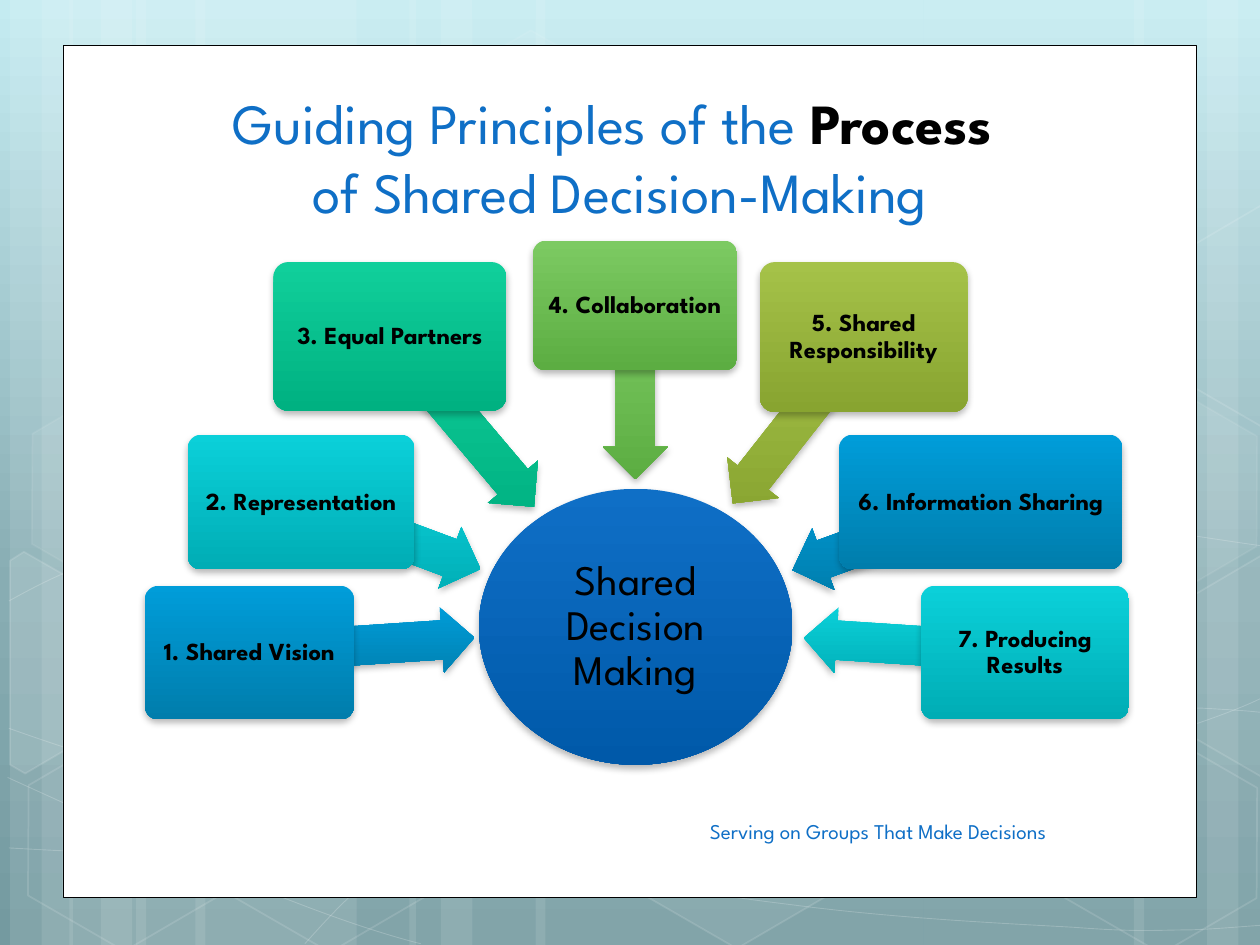
import copy
import math

import pptx
import pptx.dml.color
import pptx.enum.shapes
import pptx.enum.text
import pptx.oxml
import pptx.oxml.ns
import pptx.util
from pptx.util import Inches

FONT = "League Spartan"
SHAPES = pptx.enum.shapes.MSO_SHAPE
COLORS = {"white": "FFFFFF", "black": "000000", "title": "0F6FC6"}
GRADIENTS = {
    "backdrop": ["C4EBF1", "88ADB3", "749AA0"],
    "hub": ["0F6FC6", "0059A9"],
    "blue": ["009DD9", "007DAC"],
    "teal": ["0BD0D9", "00ADB5"],
    "mint": ["10CF9B", "00B181"],
    "green": ["7CCA62", "5CAD42"],
    "olive": ["A5C249", "88A430"],
}
BANDS = [(1.08, 1.75), (0.08, 0.5), (0.33, 0.83), (1.55, 1.75), (0.55, 0.5), (0.8, 0.83),
         (7.33, 1.75), (9.58, 0.5), (9, 0.83), (4.25, 3.08), (3.25, 0.5), (3.5, 0.83)]
WAVES = [
    [(0.07, 6.73), (0.61, 6.76), (1.15, 6.79), (1.9, 6.78), (2.65, 6.77), (3.58, 6.75), (4.58, 6.65),
     (5.58, 6.55), (7, 6.36), (7.92, 6.17), (8.83, 5.98), (9.77, 5.68), (10.07, 5.51)],
    [(0.07, 4.77), (0.36, 4.61), (0.65, 4.46), (1.21, 4.31), (1.78, 4.16), (2.59, 3.94), (3.47, 3.87),
     (4.36, 3.8), (5.44, 3.79), (6.54, 3.87), (7.64, 3.95), (9.47, 4.26), (10.07, 4.34)],
    [(0.06, 6.17), (1.27, 6.72), (2.47, 7.27), (3.34, 7.49)],
    [(0.07, 5.78), (0.38, 5.89), (0.7, 6), (1.28, 6.16), (1.86, 6.31), (2.73, 6.56), (3.57, 6.73),
     (4.4, 6.9), (5.45, 7.08), (6.28, 7.18), (7.11, 7.29), (8, 7.33), (8.53, 7.36),
     (9.05, 7.4), (9.19, 7.38), (9.45, 7.38), (9.71, 7.37), (9.89, 7.35), (10.07, 7.34)],
    [(2.42, 7.49), (2.6, 7.29), (2.78, 7.09), (3.02, 6.91), (3.26, 6.73), (3.6, 6.53), (3.88, 6.39),
     (4.16, 6.25), (4.33, 6.19), (4.7, 6.09), (5.06, 5.99), (5.73, 5.85), (6.08, 5.78),
     (6.44, 5.71), (6.49, 5.71), (6.8, 5.69), (7.11, 5.66), (7.6, 5.63), (7.94, 5.62),
     (8.29, 5.61), (8.86, 5.62), (8.86, 5.62), (9.53, 5.62),
     (9.71, 5.63), (9.88, 5.64), (9.97, 5.65), (10.06, 5.66), (10.03, 5.65), (10.06, 5.66)],
]
STRAIGHT_END = (9.53, 5.62)
HEXAGONS = [(3.34, 0.36, 4, 8), (4.97, 5.89, 6, 12), (0.11, 5.91, 0, 12), (0.14, 3.12, 7, 8),
            (1.74, 5.92, 0, 12), (7.53, 4.53, 10, 12), (8.34, 5.93, 0, 12), (8.34, 3.14, 7, 8)]
CUT_HEXAGONS = [
    ([(0.08, 4.45), (0.19, 4.38), (0.96, 4.82), (0.95, 5.7), (0.2, 6.14), (0.08, 6.07)], 10),
    ([(9.26, 4.85), (10.01, 4.41), (10.09, 4.46), (10.09, 6.13), (10.02, 6.17), (9.26, 5.73)], 4),
    ([(9.26, 2.07), (10.01, 1.63), (10.1, 1.68), (10.09, 3.35), (10.02, 3.39), (9.26, 2.95)], 0),
]
HUB = (3.8, 3.88, 2.49, 2.19)
PRINCIPLES = [
    ("1. Shared Vision", "blue", (1.15, 4.65, 1.66, 1.06), 1.79),
    ("2. Representation", "teal", (1.49, 3.45, 1.8, 1.07), 1.52),
    ("3. Equal Partners", "mint", (2.17, 2.08, 1.85, 1.18), 1.77),
    ("4. Collaboration", "green", (4.23, 1.91, 1.62, 1.03), 1.38),
    ("5. Shared Responsibility", "olive", (6.03, 2.08, 1.65, 1.19), 1.68),
    ("6. Information Sharing", "blue", (6.66, 3.45, 2.25, 1.07), 1.59),
    ("7. Producing Results", "teal", (7.31, 4.65, 1.65, 1.06), 1.76),
]


def rgb(name):
    return pptx.dml.color.RGBColor.from_string(COLORS[name])


def paint(fill, name, opacity=100):
    if not opacity:
        fill.background()
        return
    fill.solid()
    fill.fore_color.rgb = rgb(name)
    if opacity < 100:
        color = fill._xPr.find(".//" + pptx.oxml.ns.qn("a:srgbClr"))
        color.append(color.makeelement(pptx.oxml.ns.qn("a:alpha"), {"val": str(opacity * 1000)}))


def blend(fill, name, positions=(0, 1)):
    fill.gradient()
    fill.gradient_angle = 270
    gradient = fill._xPr.find(pptx.oxml.ns.qn("a:gradFill"))
    gradient.set("rotWithShape", "0")
    stops = gradient.find(pptx.oxml.ns.qn("a:gsLst"))
    while len(stops) < len(positions):
        stops.append(copy.deepcopy(stops[-1]))
    for stop, position, color in zip(fill.gradient_stops, positions, GRADIENTS[name]):
        stop.position = position
        stop.color.rgb = pptx.dml.color.RGBColor.from_string(color)


def add_preset(slide, kind, box):
    shape = slide.shapes.add_shape(kind, *map(Inches, box))
    shape.shadow.inherit = False
    shape.line.fill.background()
    return shape


def add_raised(slide, kind, box, gradient):
    shape = add_preset(slide, kind, box)
    blend(shape.fill, gradient)
    effects = shape._element.spPr.find(pptx.oxml.ns.qn("a:effectLst"))
    effects.append(pptx.oxml.parse_xml(
        f'<a:outerShdw {pptx.oxml.ns.nsdecls("a")} blurRad="50800" dist="25400" dir="5400000"'
        ' rotWithShape="0"><a:srgbClr val="000000"><a:alpha val="28000"/></a:srgbClr></a:outerShdw>'))
    return shape


def outline(shape, name, width, opacity=100):
    shape.line.width = pptx.util.Pt(width)
    paint(shape.line.fill, name, opacity)


def add_outline(slide, points, close):
    corners = [(Inches(x), Inches(y)) for x, y in points]
    builder = slide.shapes.build_freeform(*corners[0])
    builder.add_line_segments(corners[1:], close=close)
    freeform = builder.convert_to_shape()
    freeform.shadow.inherit = False
    return freeform


def add_wave(slide, knots):
    wave = add_outline(slide, knots, False)
    segments = list(wave._element.iter(pptx.oxml.ns.qn("a:lnTo")))
    start = 0
    while start < len(segments):
        if knots[start + 1] == STRAIGHT_END:
            start += 1
            continue
        first = segments[start]
        curve = first.makeelement(pptx.oxml.ns.qn("a:cubicBezTo"), {})
        first.addprevious(curve)
        for segment in segments[start:start + 3]:
            curve.append(segment[0])
            segment.getparent().remove(segment)
        start += 3
    return wave


def style_run(run, size, color, bold=False):
    run.font.name = FONT
    run.font.size = pptx.util.Pt(size)
    run.font.bold = bold
    run.font.color.rgb = rgb(color)


def write_label(shape, text, size, inset, bold=False):
    frame = shape.text_frame
    frame.word_wrap = True
    frame.vertical_anchor = pptx.enum.text.MSO_ANCHOR.MIDDLE
    frame.margin_left = frame.margin_right = frame.margin_top = frame.margin_bottom = Inches(inset)
    frame.text = text
    paragraph = frame.paragraphs[0]
    paragraph.alignment = pptx.enum.text.PP_ALIGN.CENTER
    paragraph.line_spacing = 0.9
    style_run(paragraph.runs[0], size, "black", bold)


def draw_backdrop(slide, height):
    blend(slide.background.fill, "backdrop", (0, 0.62, 1))
    for left, width in BANDS:
        paint(add_preset(slide, SHAPES.RECTANGLE, (left, 0, width, height)).fill, "white", 10)
    for knots in WAVES:
        wave = add_wave(slide, knots)
        wave.fill.background()
        outline(wave, "white", 0.5, 20)
    for left, top, fill_opacity, line_opacity in HEXAGONS:
        hexagon = add_preset(slide, SHAPES.HEXAGON, (left, top, 1.75, 1.52))
        hexagon.adjustments[0] = 0.285
        hexagon.rotation = 30
        paint(hexagon.fill, "white", fill_opacity)
        outline(hexagon, "white", 1, line_opacity)
    for corners, fill_opacity in CUT_HEXAGONS:
        cut_hexagon = add_outline(slide, corners, True)
        paint(cut_hexagon.fill, "white", fill_opacity)
        outline(cut_hexagon, "white", 1, 12)


def draw_panel(slide, box):
    panel = add_preset(slide, SHAPES.RECTANGLE, box)
    paint(panel.fill, "white")
    outline(panel, "black", 0.5)


def write_heading(slide, box, pieces, size, anchor):
    frame = slide.shapes.add_textbox(*map(Inches, box)).text_frame
    frame.word_wrap = True
    frame.vertical_anchor = anchor
    paragraph = frame.paragraphs[0]
    paragraph.alignment = pptx.enum.text.PP_ALIGN.CENTER
    for text, emphasis in pieces:
        if text == "\v":
            paragraph.add_line_break()
            continue
        run = paragraph.add_run()
        run.text = text
        style_run(run, size, "black" if emphasis else "title", emphasis)


def draw_principle(slide, text, gradient, box, arrow_length, hub_center):
    left, top, width, height = box
    x, y = left + width / 2, top + height / 2
    angle = math.atan2(y - hub_center[1], x - hub_center[0])
    middle_x = x - math.cos(angle) * arrow_length / 2
    middle_y = y - math.sin(angle) * arrow_length / 2
    thickness = 0.52
    arrow = add_raised(slide, SHAPES.LEFT_ARROW, (middle_x - arrow_length / 2, middle_y - thickness / 2,
                                                  arrow_length, thickness), gradient)
    arrow.adjustments[0], arrow.adjustments[1] = 0.6, 0.5
    arrow.rotation = math.degrees(angle) % 360
    card = add_raised(slide, SHAPES.ROUNDED_RECTANGLE, box, gradient)
    card.adjustments[0] = 0.1
    write_label(card, text, 14, 0.03, True)


def draw_diagram(slide, hub_box):
    left, top, width, height = hub_box
    hub = add_raised(slide, SHAPES.OVAL, hub_box, "hub")
    write_label(hub, "Shared Decision Making", 24, 0.02)
    for principle in PRINCIPLES:
        draw_principle(slide, *principle, (left + width / 2, top + height / 2))


def main():
    deck = pptx.Presentation()
    deck.slide_width, deck.slide_height = Inches(10), Inches(7.5)
    slide = deck.slides.add_slide(deck.slide_layouts[6])
    anchors = pptx.enum.text.MSO_ANCHOR
    draw_backdrop(slide, 7.5)
    draw_panel(slide, (0.5, 0.36, 9, 6.76))
    write_heading(slide, (1.08, 0.58, 7.68, 1.25),
                  [("Guiding Principles of the ", False), ("Process ", True), ("\v", False),
                   ("of Shared Decision-Making", False)], 32.4, anchors.BOTTOM)
    write_heading(slide, (5.03, 6.4, 3.88, 0.4),
                  [("Serving on Groups That Make Decisions", False)], 12, anchors.MIDDLE)
    draw_diagram(slide, HUB)
    deck.save("out.pptx")


if __name__ == "__main__":
    main()
